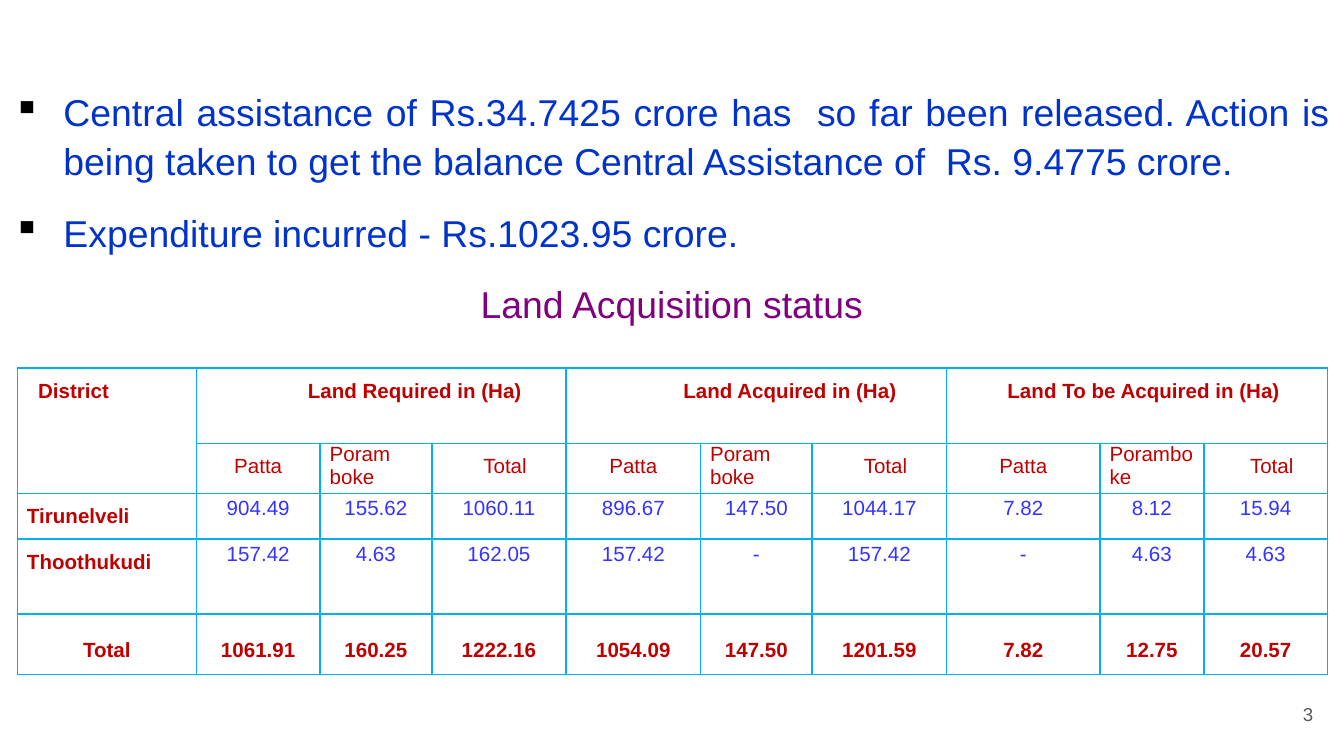
from lxml.etree import SubElement
from pptx import Presentation
from pptx.dml.color import RGBColor
from pptx.enum.text import MSO_ANCHOR, PP_ALIGN
from pptx.oxml.ns import qn
from pptx.util import Cm, Pt

BLUE = RGBColor(0x00, 0x33, 0xCC)
PURPLE = RGBColor(0x80, 0x00, 0x80)
RED = RGBColor(0xC0, 0x00, 0x00)
FIGURE = RGBColor(0x33, 0x33, 0xFF)
GREY = RGBColor(0x59, 0x59, 0x59)
BORDER = RGBColor(0x00, 0xB0, 0xF0)
BLACK = RGBColor(0x00, 0x00, 0x00)

BULLETS = [
    "Central assistance of Rs.34.7425 crore has  so far been released. "
    "Action is being taken to get the balance Central Assistance of  Rs. 9.4775 crore. ",
    "Expenditure incurred - Rs.1023.95 crore.",
]
GROUPS = [("Land Required in (Ha)", 1.27), ("Land Acquired in (Ha)", 1.27),
          ("Land To be Acquired in (Ha)", 0.25)]
SUBHEADS = ["Patta", "Poram boke", "Total"] * 2 + ["Patta", "Poramboke", "Total"]
DISTRICTS = [
    ["Tirunelveli", "904.49", "155.62", "1060.11", "896.67", "147.50", "1044.17",
     "7.82", "8.12", "15.94"],
    ["Thoothukudi", "157.42", "4.63", "162.05", "157.42", "-", "157.42",
     "-", "4.63", "4.63"],
]
TOTALS = ["Total", "1061.91", "160.25", "1222.16", "1054.09", "147.50", "1201.59",
          "7.82", "12.75", "20.57"]
COL_WIDTHS = [3.38, 2.34, 2.11, 2.54, 2.54, 2.11, 2.54, 2.9, 1.96, 2.34]
ROW_HEIGHTS = [1.42, 0.95, 0.86, 1.42, 1.14]


def write(p, text, size, color, align=PP_ALIGN.CENTER, bold=False,
          spacing=None, before=None, after=None):
    """Fill a paragraph and format its runs."""
    p.text = text
    p.alignment = align
    p.line_spacing = spacing
    p.space_before = None if before is None else Pt(before)
    p.space_after = None if after is None else Pt(after)
    for r in p.runs:
        r.font.name = "Arial"
        r.font.size = Pt(size)
        r.font.bold = bold
        r.font.color.rgb = color


def set_indent(p, left, first=0):
    """Set the left margin and first-line indent of a paragraph."""
    pPr = p._p.get_or_add_pPr()
    pPr.set("marL", str(Cm(left)))
    pPr.set("indent", str(Cm(first)))


def add_bullet(p):
    """Give a paragraph a black square bullet with a hanging indent."""
    set_indent(p, 0.95, -0.95)
    pPr = p._p.get_or_add_pPr()
    color = SubElement(pPr, qn("a:buClr"))
    SubElement(color, qn("a:srgbClr"), val=str(BLACK))
    SubElement(pPr, qn("a:buChar"), char="▪")


def add_textbox(slide, left, top, width, height):
    """Add a wrapping text box and return its text frame."""
    sp = slide.shapes.add_textbox(Cm(left), Cm(top), Cm(width), Cm(height))
    tf = sp.text_frame
    tf.word_wrap = True
    return tf


def add_status_text(slide):
    """Add the funding bullets and the table heading."""
    tf = add_textbox(slide, 0, 1.47, 25.4, 4.88)
    for i, text in enumerate(BULLETS):
        p = tf.paragraphs[0] if i == 0 else tf.add_paragraph()
        write(p, text, 20, BLUE, PP_ALIGN.JUSTIFY, spacing=1.1, before=12)
        add_bullet(p)
    write(tf.add_paragraph(), "Land Acquisition status", 20, PURPLE,
          spacing=1.1, before=12)


def style_cell(cell):
    """Clear the fill, set the margins and draw the four borders of a cell."""
    cell.margin_left = cell.margin_right = Cm(0.18)
    cell.margin_top = cell.margin_bottom = 0
    cell.fill.background()
    tcPr = cell._tc.get_or_add_tcPr()
    for i, side in enumerate(("lnL", "lnR", "lnT", "lnB")):
        ln = SubElement(tcPr, qn(f"a:{side}"), w=str(Pt(1)))
        fill = SubElement(ln, qn("a:solidFill"))
        SubElement(fill, qn("a:srgbClr"), val=str(BORDER))
        tcPr.insert(i, ln)


def write_cell(cell, text, color=RED, **style):
    """Write the single paragraph of a table cell and return it."""
    p = cell.text_frame.paragraphs[0]
    write(p, text, 11, color, **style)
    return p


def fill_headers(table):
    """Write the two header rows and merge their spanning cells."""
    style = {"spacing": 1.5, "after": 10}
    table.cell(0, 0).merge(table.cell(1, 0))
    p = write_cell(table.cell(0, 0), "District", align=PP_ALIGN.LEFT, bold=True, **style)
    set_indent(p, 0.21)
    for i, (title, indent) in enumerate(GROUPS):
        col = 1 + 3 * i
        table.cell(0, col).merge(table.cell(0, col + 2))
        p = write_cell(table.cell(0, col), title, bold=True, **style)
        set_indent(p, indent)
    for col, text in enumerate(SUBHEADS, 1):
        cell = table.cell(1, col)
        if text.startswith("Poram"):
            write_cell(cell, text, align=PP_ALIGN.LEFT)
            continue
        p = write_cell(cell, text, **style)
        if text == "Total":
            set_indent(p, 1.27, -1.04)


def fill_figures(table):
    """Write the district rows and the total row."""
    for row, (name, *figures) in enumerate(DISTRICTS, 2):
        write_cell(table.cell(row, 0), name, align=PP_ALIGN.JUSTIFY, bold=True,
                   spacing=1.5, after=10)
        for col, text in enumerate(figures, 1):
            write_cell(table.cell(row, col), text, FIGURE, spacing=1.15)
    for col, text in enumerate(TOTALS):
        cell = table.cell(4, col)
        cell.vertical_anchor = MSO_ANCHOR.MIDDLE
        write_cell(cell, text, bold=True, spacing=1.5)


def add_land_table(slide):
    """Add the land acquisition table."""
    frame = slide.shapes.add_table(
        len(ROW_HEIGHTS), len(COL_WIDTHS), Cm(0.33), Cm(6.96),
        Cm(sum(COL_WIDTHS)), Cm(sum(ROW_HEIGHTS)))
    table = frame.table
    table.first_row = table.horz_banding = False
    for column, width in zip(table.columns, COL_WIDTHS):
        column.width = Cm(width)
    for row, height in zip(table.rows, ROW_HEIGHTS):
        row.height = Cm(height)
    for cell in table.iter_cells():
        style_cell(cell)
    fill_headers(table)
    fill_figures(table)


def add_page_number(slide):
    """Add the page number at the lower right."""
    tf = add_textbox(slide, 23.55, 12.95, 1.52, 1.09)
    tf.margin_top = tf.margin_bottom = Cm(0.25)
    tf.vertical_anchor = MSO_ANCHOR.MIDDLE
    write(tf.paragraphs[0], "3", 10, GREY, PP_ALIGN.RIGHT)


def main():
    """Build the slide and save it."""
    prs = Presentation()
    prs.slide_width, prs.slide_height = Cm(25.4), Cm(14.29)
    slide = prs.slides.add_slide(prs.slide_layouts[6])
    add_status_text(slide)
    add_land_table(slide)
    add_page_number(slide)
    prs.save("out.pptx")


if __name__ == "__main__":
    main()
